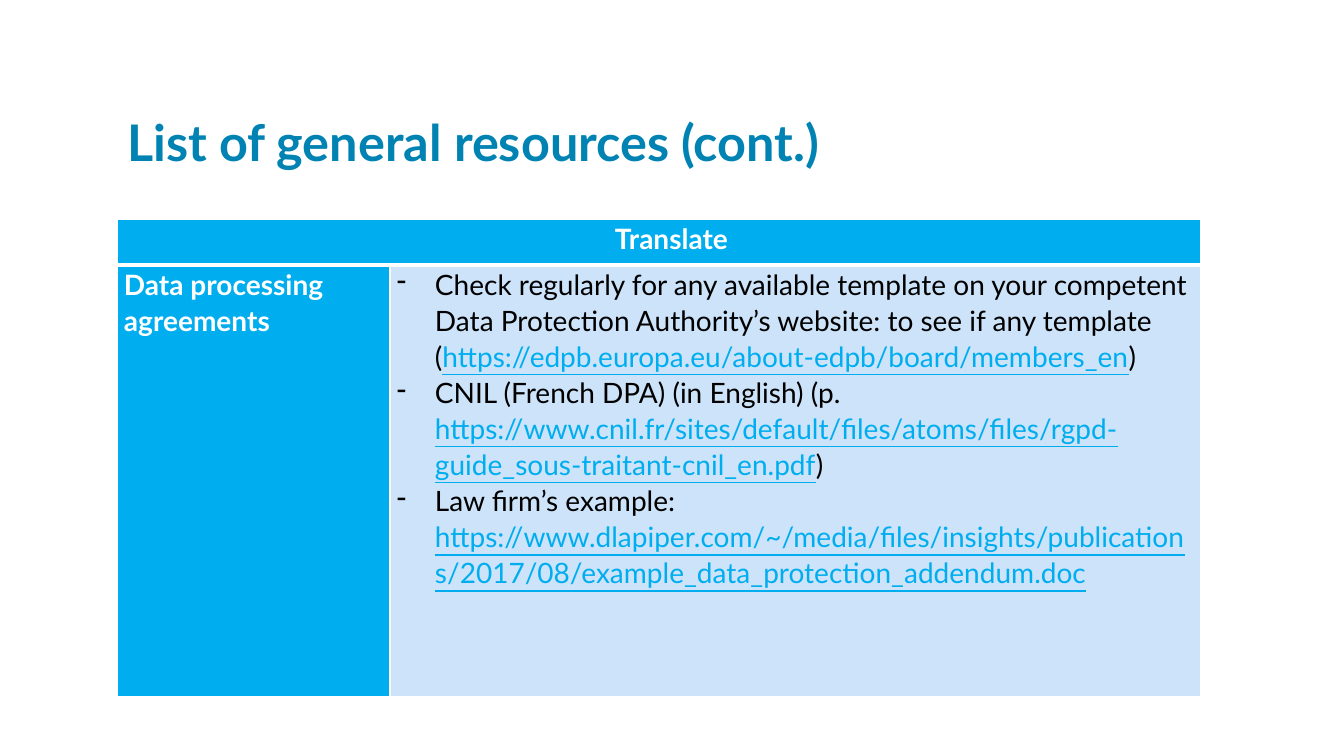
import pptx
import pptx.util
import pptx.dml.color
import pptx.enum.text
import pptx.oxml
import pptx.oxml.ns

RGB = pptx.dml.color.RGBColor
ALIGN = pptx.enum.text.PP_ALIGN
ANCHOR = pptx.enum.text.MSO_ANCHOR

TEAL = RGB(0x00, 0x83, 0xB3)
CYAN = RGB(0x00, 0xAE, 0xEF)
PALE = RGB(0xCC, 0xE3, 0xF9)
WHITE = RGB(0xFF, 0xFF, 0xFF)
BLACK = RGB(0x00, 0x00, 0x00)

SCALE = 914400 / 100.8


def px(size):
    return pptx.util.Emu(round(size * SCALE))


class Page:
    """Holds the style and the current slide."""

    font = "Lato"
    body = 20
    lead = 1.07

    def __init__(self, deck):
        self.slide = deck.slides.add_slide(deck.slide_layouts[5])

    def style(self, run, size, color, bold=False, under=False):
        font = run.font
        font.name, font.size = self.font, pptx.util.Pt(size)
        font.bold, font.underline = bold, under
        font.color.rgb = color

    def title(self, text, left, top, width, height):
        shape = self.slide.shapes.title
        shape.left, shape.top = px(left), px(top)
        shape.width, shape.height = px(width), px(height)
        frame = shape.text_frame
        frame.text = text
        frame.word_wrap = True
        frame.vertical_anchor = ANCHOR.BOTTOM
        para = frame.paragraphs[0]
        para.alignment = ALIGN.LEFT
        para.line_spacing = 0.8
        self.style(para.runs[0], 36, TEAL, bold=True)

    def table(self, left, top, cols, rows):
        frame = self.slide.shapes.add_table(
            len(rows), len(cols), px(left), px(top), px(sum(cols)), px(sum(rows)))
        table = frame.table
        for col, width in zip(table.columns, cols):
            col.width = px(width)
        for row, height in zip(table.rows, rows):
            row.height = px(height)
        return table

    def cell(self, cell, fill, base=1):
        cell.margin_left = cell.margin_right = px(7)
        cell.margin_top = cell.margin_bottom = 0
        cell.vertical_anchor = ANCHOR.TOP
        cell.fill.solid()
        cell.fill.fore_color.rgb = fill
        props = cell._tc.get_or_add_tcPr()
        for spot, (side, wide) in enumerate(zip("LRTB", (1, 1, 1, base))):
            line = pptx.oxml.parse_xml(
                f'<a:ln{side} {pptx.oxml.ns.nsdecls("a")} w="{pptx.util.Pt(wide)}">'
                f'<a:solidFill><a:srgbClr val="{WHITE}"/></a:solidFill></a:ln{side}>')
            props.insert(spot, line)

    def label(self, cell, text, align=ALIGN.LEFT, indent=0):
        cell.text_frame.text = text
        para = cell.text_frame.paragraphs[0]
        para.alignment = align
        para.line_spacing = self.lead
        para._p.get_or_add_pPr().set("marL", str(px(indent)))
        self.style(para.runs[0], self.body, WHITE, bold=True)

    def bullets(self, cell, items, indent):
        frame = cell.text_frame
        for spot, parts in enumerate(items):
            para = frame.add_paragraph() if spot else frame.paragraphs[0]
            para.line_spacing = self.lead
            props = para._p.get_or_add_pPr()
            props.set("marL", str(px(indent)))
            props.set("indent", str(px(-indent)))
            props.append(pptx.oxml.parse_xml(
                f'<a:buChar {pptx.oxml.ns.nsdecls("a")} char="-"/>'))
            for text in parts:
                run = para.add_run()
                run.text = text
                link = text.startswith("https")
                self.style(run, self.body, CYAN if link else BLACK, under=link)


ITEMS = [
    ("Check regularly for any available template on your competent "
     "Data Protection Authority’s website: to see if any template (",
     "https://edpb.europa.eu/about-edpb/board/members_en", ")"),
    ("CNIL (French DPA) (in English) (p. ",
     "https://www.cnil.fr/sites/default/files/atoms/files/"
     "rgpd-guide_sous-traitant-cnil_en.pdf", ")"),
    ("Law firm’s example: ",
     "https://www.dlapiper.com/~/media/files/insights/publications/"
     "2017/08/example_data_protection_addendum.doc"),
]


def main():
    deck = pptx.Presentation()
    deck.slide_width, deck.slide_height = px(1344), px(756)
    page = Page(deck)

    # Title
    page.title("List of general resources (cont.)", 117, 58, 958, 118)

    # Table grid
    table = page.table(117, 219, cols=(273, 811), rows=(46, 432))
    head, side = table.cell(0, 0), table.cell(1, 0)
    main_cell = table.cell(1, 1)
    head.merge(table.cell(0, 1))
    for cell in (head, table.cell(0, 1)):
        page.cell(cell, CYAN, base=3)
    page.cell(side, CYAN)
    page.cell(main_cell, PALE)

    # Table text
    page.label(head, "Translate", ALIGN.CENTER, indent=25)
    page.label(side, "Data processing agreements")
    page.bullets(main_cell, ITEMS, indent=38)

    deck.save("out.pptx")


if __name__ == "__main__":
    main()
